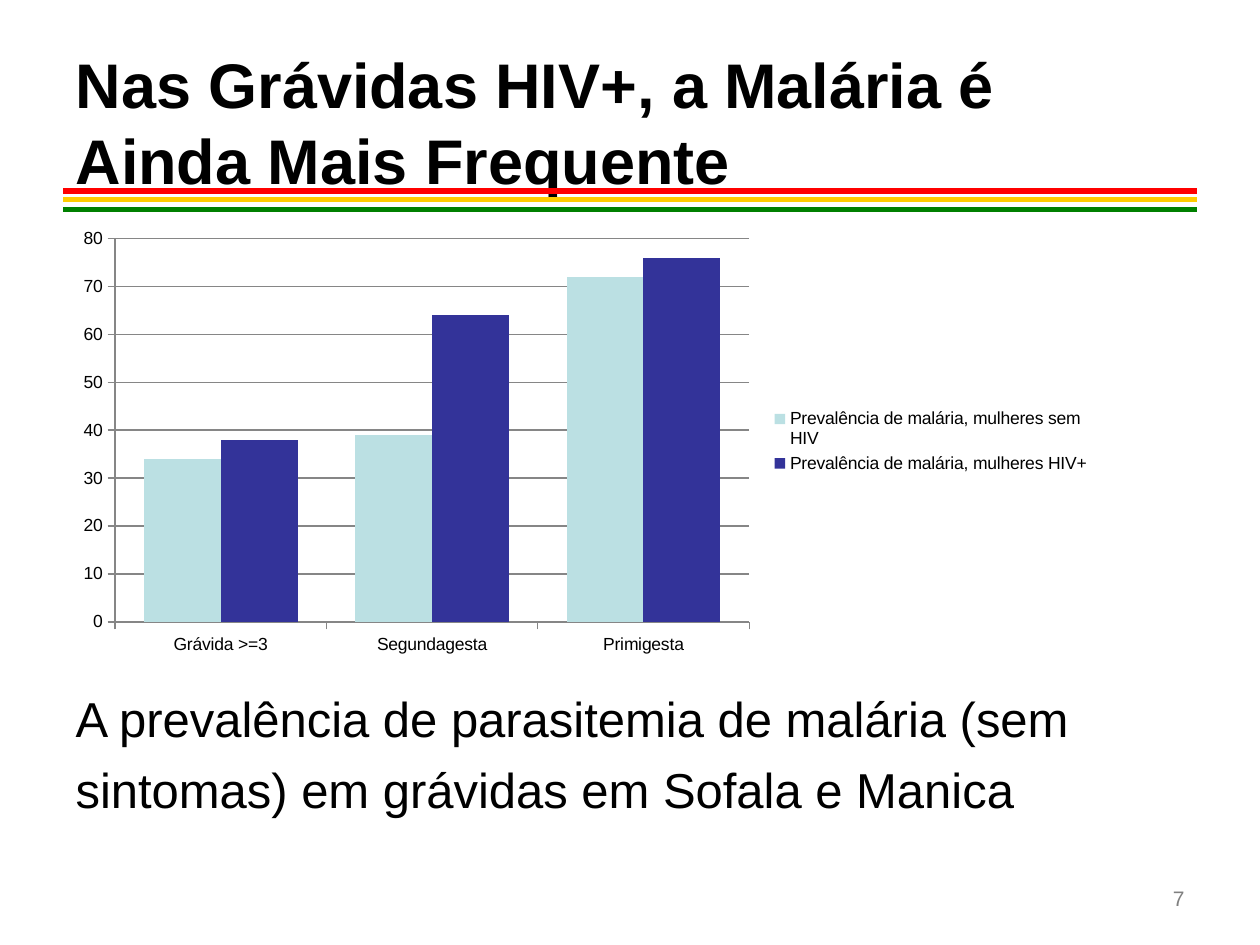
from dataclasses import dataclass

from lxml import etree
from pptx import Presentation
from pptx import util as u
from pptx.chart import data as cd
from pptx.dml.color import RGBColor
from pptx.enum import chart as ce
from pptx.enum import shapes, text
from pptx.oxml import parse_xml
from pptx.oxml.ns import nsdecls, qn


@dataclass(frozen=True)
class Theme:
    font: str = "Arial"
    ink: str = "000000"
    grey: str = "808080"
    axis: str = "868686"
    pale: str = "BBE0E3"
    deep: str = "333399"
    red: str = "FF0000"
    gold: str = "FFCC00"
    green: str = "008000"
    head: int = 36
    body: int = 28
    note: int = 12
    label: int = 10


def rgb(code):
    return RGBColor.from_string(code)


def write(frame, words, size, color, bold=False, align=text.PP_ALIGN.LEFT,
          anchor=text.MSO_ANCHOR.TOP, gap=0, plain=False):
    frame.word_wrap = True
    frame.auto_size = text.MSO_AUTO_SIZE.NONE
    frame.vertical_anchor = anchor
    for i, line in enumerate(words):
        para = frame.paragraphs[0] if i == 0 else frame.add_paragraph()
        para.text = line
        para.alignment = align
        para.space_before = u.Pt(gap if i else 0)
        if plain:
            props = para._p.get_or_add_pPr()
            props.set("marL", "0")
            props.set("indent", "0")
            etree.SubElement(props, qn("a:buNone"))
        for run in para.runs:
            run.font.name = Theme.font
            run.font.size = u.Pt(size)
            run.font.bold = bold
            run.font.color.rgb = rgb(color)


class Deck:
    def __init__(self, look):
        self.look = look
        self.show = Presentation()
        self.show.slide_width = u.Cm(25.4)
        self.show.slide_height = u.Cm(19.05)
        self.page = self.show.slides.add_slide(self.show.slide_layouts[1])

    def place(self, item, box):
        item.left, item.top, item.width, item.height = map(u.Cm, box)

    def rule(self, left, right, y, color):
        line = self.page.shapes.add_connector(
            shapes.MSO_CONNECTOR.STRAIGHT,
            u.Cm(left), u.Cm(y), u.Cm(right), u.Cm(y))
        line.line.color.rgb = rgb(color)
        line.line.width = u.Pt(3)
        etree.SubElement(line._element.spPr, qn("a:effectLst"))

    def title(self, words, box):
        item = self.page.shapes.title
        self.place(item, box)
        write(item.text_frame, [words], self.look.head, self.look.ink,
              bold=True, anchor=text.MSO_ANCHOR.MIDDLE)

    def body(self, words, box):
        item = self.page.placeholders[1]
        self.place(item, box)
        write(item.text_frame, words, self.look.body, self.look.ink,
              align=text.PP_ALIGN.JUSTIFY, gap=6.5, plain=True)

    def number(self, words, box):
        item = self.page.shapes.add_textbox(*map(u.Cm, box))
        write(item.text_frame, [words], self.look.note, self.look.grey,
              align=text.PP_ALIGN.RIGHT)

    def bars(self, cats, rows, box):
        data = cd.CategoryChartData()
        data.categories = cats
        for name, vals, _ in rows:
            data.add_series(name, vals)
        chart = self.page.shapes.add_chart(
            ce.XL_CHART_TYPE.COLUMN_CLUSTERED, *map(u.Cm, box), data).chart
        chart.has_title = False
        chart.font.name = self.look.font
        chart.font.size = u.Pt(self.look.label)
        chart.font.color.rgb = rgb(self.look.ink)
        chart.has_legend = True
        chart.legend.position = ce.XL_LEGEND_POSITION.RIGHT
        chart.legend.include_in_layout = False
        plot = chart.plots[0]
        plot.vary_by_categories = False
        plot.gap_width = 75
        plot.overlap = 0
        for bar, (_, _, color) in zip(plot.series, rows):
            bar.format.fill.solid()
            bar.format.fill.fore_color.rgb = rgb(color)
        scale = chart.value_axis
        scale.minimum_scale, scale.maximum_scale = 0, 80
        scale.major_unit = 10
        scale.has_major_gridlines = True
        for axis in (scale, chart.category_axis):
            axis.major_tick_mark = ce.XL_TICK_MARK.OUTSIDE
            axis.minor_tick_mark = ce.XL_TICK_MARK.NONE
            axis.format.line.color.rgb = rgb(self.look.axis)
        scale.major_gridlines.format.line.color.rgb = rgb(self.look.axis)
        self.fit(chart, x=0.05, y=0.04, w=0.61, h=0.87)

    def fit(self, chart, **part):
        area = chart._chartSpace.chart.plotArea
        for old in area.findall(qn("c:layout")):
            area.remove(old)
        size = "".join(f'<c:{k} val="{v}"/>' for k, v in part.items())
        area.insert(0, parse_xml(
            f'<c:layout {nsdecls("c")}><c:manualLayout>'
            '<c:layoutTarget val="inner"/><c:xMode val="edge"/>'
            f'<c:yMode val="edge"/>{size}</c:manualLayout></c:layout>'))


def main():
    look = Theme()
    deck = Deck(look)
    for y, color in ((4.02, look.gold), (3.85, look.red), (4.23, look.green)):
        deck.rule(1.27, 24.13, y, color)
    deck.number("7", (21.17, 17.73, 2.96, 1.32))
    deck.title("Nas Grávidas HIV+, a Malária é Ainda Mais Frequente",
               (1.27, 0.85, 21.8, 3.18))
    deck.body(["A prevalência de parasitemia de malária (sem",
               "sintomas) em grávidas em Sofala e Manica"],
              (1.27, 13.76, 22.86, 3.39))
    deck.bars(["Grávida >=3", "Segundagesta", "Primigesta"],
              [("Prevalência de malária, mulheres sem HIV",
                (34, 39, 72), look.pale),
               ("Prevalência de malária, mulheres HIV+",
                (38, 64, 76), look.deep)],
              (1.27, 4.45, 20.96, 8.89))
    deck.show.save("out.pptx")


if __name__ == "__main__":
    main()
